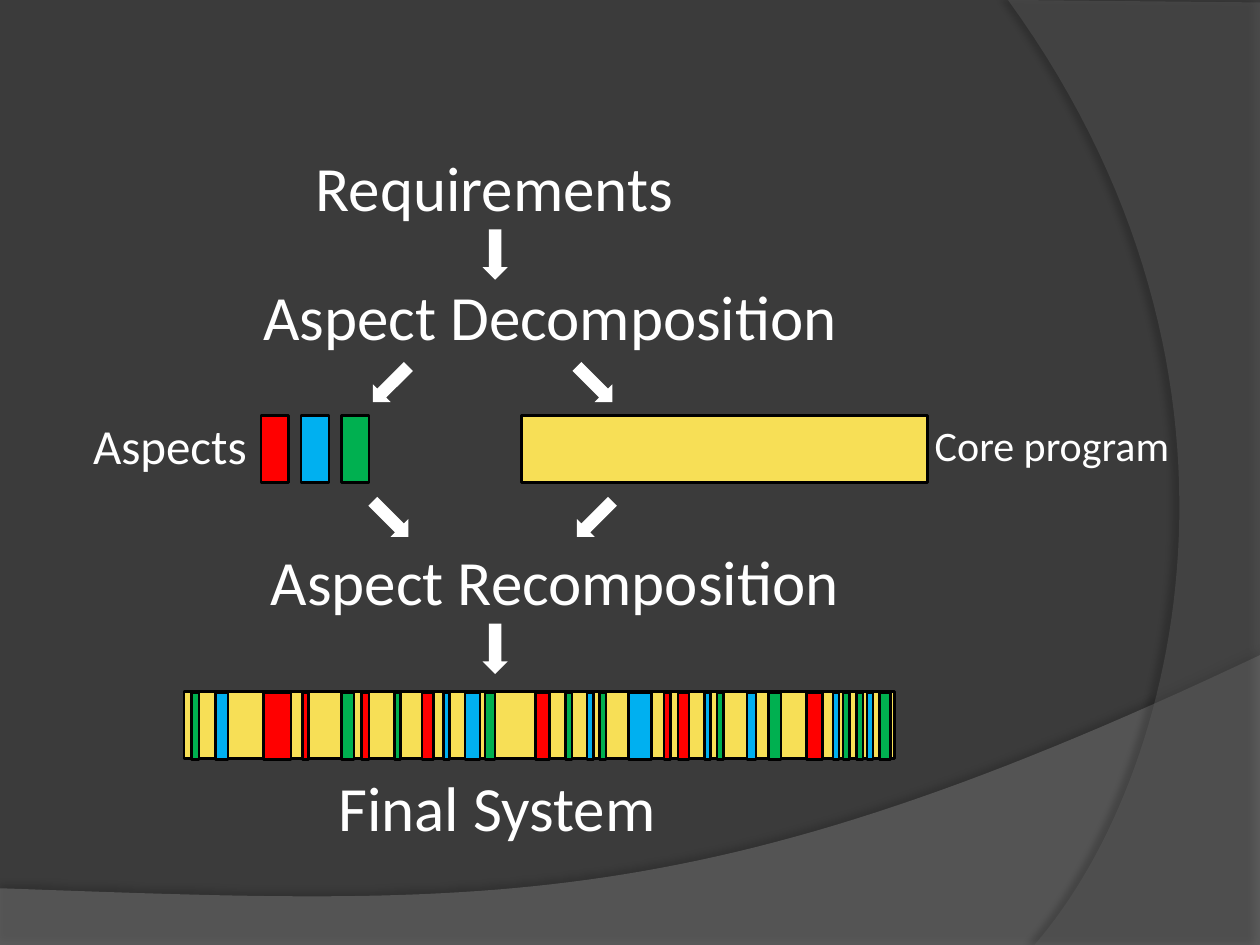
"""Builds a slide on aspect decomposition and recomposition."""
from lxml.etree import SubElement
from pptx import Presentation
from pptx.dml.color import RGBColor
from pptx.enum.shapes import MSO_SHAPE as Shape
from pptx.enum.text import MSO_AUTO_SIZE as AutoSize, PP_ALIGN as Align
from pptx.oxml.ns import qn
from pptx.util import Inches, Pt

BACKGROUND = RGBColor(0x3B, 0x3B, 0x3B)
WAVE_GRAY = RGBColor(0x7F, 0x7F, 0x7F)
ARC_GRAY = RGBColor(0x5E, 0x5E, 0x5E)
WHITE = RGBColor(0xFF, 0xFF, 0xFF)
BLACK = RGBColor(0, 0, 0)
RED = RGBColor(0xFF, 0, 0)
BLUE = RGBColor(0, 0xB0, 0xF0)
GREEN = RGBColor(0, 0xB0, 0x50)
YELLOW = RGBColor(0xF7, 0xDF, 0x56)
BAR_HEIGHT = 0.53
CURVE_STEPS = 60


def add_block(parent, left, top, width, height, color, kind=Shape.RECTANGLE, outline=True, rotation=0):
    block = parent.shapes.add_shape(kind, Inches(left), Inches(top), Inches(width), Inches(height))
    block.shadow.inherit = False
    block.rotation = rotation
    block.fill.solid()
    block.fill.fore_color.rgb = color
    if outline:
        block.line.color.rgb = BLACK
        block.line.width = Pt(1.5)
    else:
        block.line.fill.background()


def add_text(text, left, top, width, height, size=36, align=Align.LEFT, wrap=True):
    box = slide.shapes.add_textbox(Inches(left), Inches(top), Inches(width), Inches(height))
    frame = box.text_frame
    frame.word_wrap = wrap
    frame.auto_size = AutoSize.SHAPE_TO_FIT_TEXT
    para = frame.paragraphs[0]
    para.alignment = align
    span = para.add_run()
    span.text = text
    span.font.name = "Calibri"
    span.font.size = Pt(size)
    span.font.color.rgb = WHITE


deck = Presentation()
deck.slide_width, deck.slide_height = Inches(10), Inches(7.5)
slide = deck.slides.add_slide(deck.slide_layouts[6])
slide.background.fill.solid()
slide.background.fill.fore_color.rgb = BACKGROUND

swooshes = [
    ([(10, 5.2), (5.59, 7.29), (3.91, 7.19), (0, 7.05)],
     [(0, 7.5), (10, 7.5)], WAVE_GRAY, 45, 35, 3.5, 270),
    ([(8.21, 7.5), (9.35, 6.19), (10.18, 3), (8, 0)],
     [(10, 0.02), (10, 7.5)], ARC_GRAY, 40, 45, 4, 180),
]
for curve, corners, color, opacity, shadow_opacity, distance, direction in swooshes:
    points = []
    for step in range(CURVE_STEPS + 1):
        t = step / CURVE_STEPS
        weights = [(1 - t) ** 3, 3 * t * (1 - t) ** 2, 3 * t ** 2 * (1 - t), t ** 3]
        points.append([sum(w * point[axis] for w, point in zip(weights, curve)) for axis in (0, 1)])
    outline = [(Inches(x), Inches(y)) for x, y in points + corners]
    builder = slide.shapes.build_freeform(*outline[0])
    builder.add_line_segments(outline[1:], close=True)
    swoosh = builder.convert_to_shape()
    swoosh.fill.solid()
    swoosh.fill.fore_color.rgb = color
    swoosh.line.fill.background()
    swoosh.shadow.inherit = False
    properties = swoosh._element.spPr
    fill_color = properties.find(qn("a:solidFill"))[0]
    SubElement(fill_color, qn("a:alpha"), val=str(opacity * 1000))
    shadow = SubElement(properties.find(qn("a:effectLst")), qn("a:outerShdw"), blurRad=str(Pt(4)),
                        dist=str(Pt(distance)), dir=str(direction * 60000), rotWithShape="0")
    shadow_color = SubElement(shadow, qn("a:srgbClr"), val=str(BLACK))
    SubElement(shadow_color, qn("a:alpha"), val=str(shadow_opacity * 1000))

for index, color in enumerate([RED, BLUE, GREEN]):
    add_block(slide, 2.07 + 0.32 * index, 3.3, 0.22, BAR_HEIGHT, color)
add_block(slide, 4.14, 3.3, 3.22, BAR_HEIGHT, YELLOW)

final_system = slide.shapes.add_group_shape()
add_block(final_system, 1.46, 5.49, 5.64, BAR_HEIGHT, YELLOW)
stripes = {
    RED: [(2.09, 0.22), (2.4, 0.05), (2.87, 0.06), (3.35, 0.09), (4.25, 0.11),
          (5.27, 0.05), (5.38, 0.09), (6.4, 0.13)],
    BLUE: [(1.71, 0.1), (3.52, 0.05), (3.69, 0.12), (4.66, 0.05), (4.99, 0.18),
           (5.59, 0.05), (5.93, 0.07), (6.61, 0.05), (6.88, 0.05)],
    GREEN: [(1.52, 0.06), (2.71, 0.1), (3.13, 0.05), (3.85, 0.08), (4.49, 0.05), (4.76, 0.05),
            (5.69, 0.05), (6.1, 0.1), (6.69, 0.05), (6.8, 0.05), (6.98, 0.09)],
}
for color, spans in stripes.items():
    for left, width in spans:
        add_block(final_system, left, 5.5, width, BAR_HEIGHT, color)

arrows = [(3.83, 1.82, 0), (3, 2.85, 45), (4.62, 2.85, 315),
          (3, 3.92, 315), (4.62, 3.92, 45), (3.83, 4.95, 0)]
for left, top, rotation in arrows:
    add_block(slide, left, top, 0.2, 0.4, WHITE, kind=Shape.DOWN_ARROW, outline=False, rotation=rotation)

add_text("Requirements", 2.15, 1.13, 3.55, 0.71, align=Align.CENTER)
add_text("Aspect Decomposition", 1.99, 2.15, 4.8, 0.71, wrap=False)
add_text("Aspects", 0.64, 3.25, 1.93, 0.57, size=28)
add_text("Core program", 7.32, 3.28, 2.41, 0.5, size=24)
add_text("Aspect Recomposition", 2.05, 4.26, 4.76, 0.71, wrap=False)
add_text("Final System", 2.47, 6.05, 2.95, 0.71, align=Align.CENTER)

deck.save("out.pptx")
